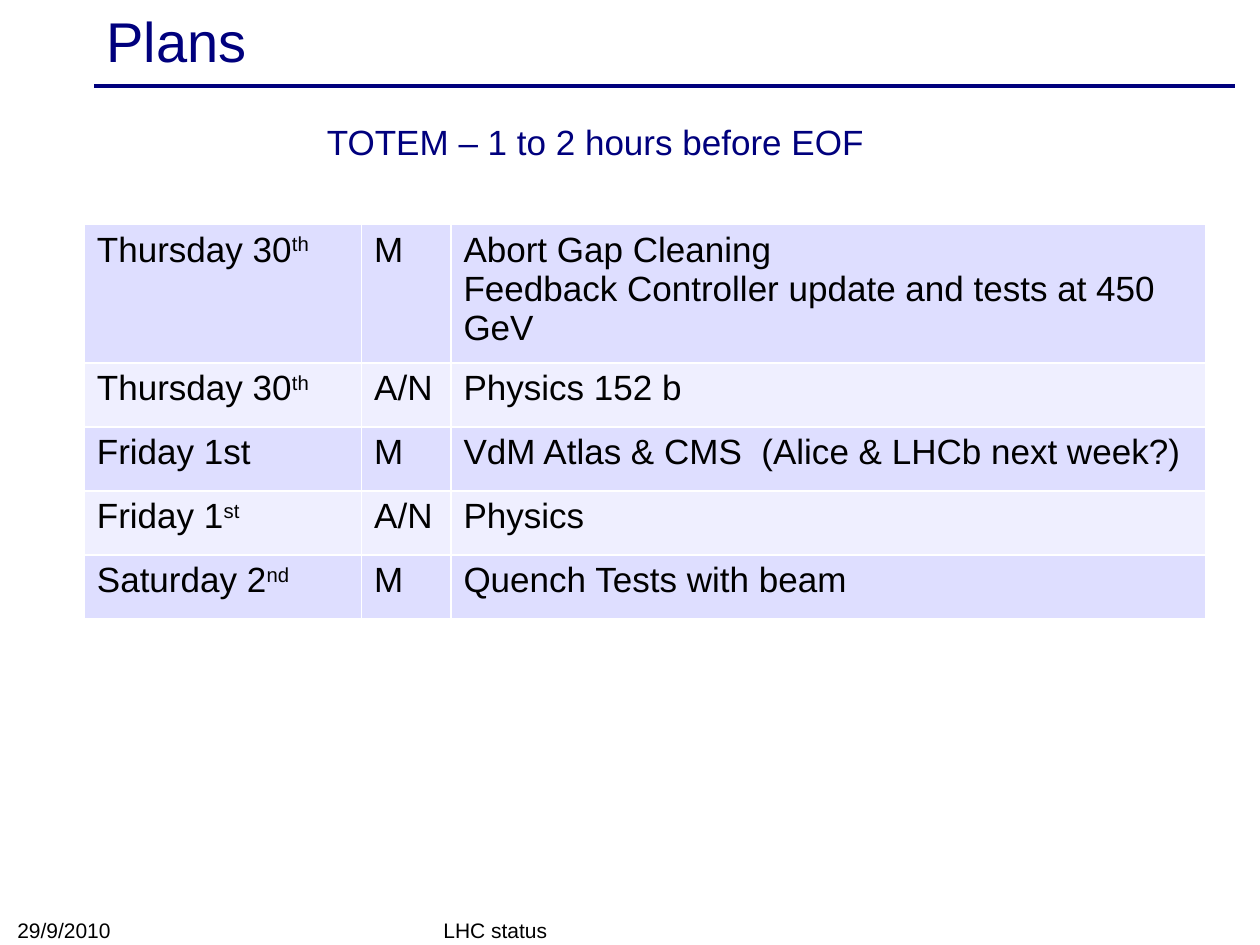
from dataclasses import dataclass

from lxml import etree
from pptx import Presentation
from pptx.dml.color import RGBColor
from pptx.enum.shapes import MSO_CONNECTOR
from pptx.enum.text import MSO_ANCHOR as Anchor, PP_ALIGN as Align
from pptx.oxml import parse_xml
from pptx.oxml.ns import nsdecls, qn
from pptx.util import Cm, Pt


@dataclass(frozen=True)
class Theme:
    font: str = "Arial"
    navy: str = "00007D"
    ink: str = "000000"
    border: str = "FFFFFF"
    bands: tuple = ("DEDEFF", "EFEFFF")
    title_size: int = 32
    body_size: int = 20
    footer_size: int = 12


theme = Theme()


def add_run(paragraph, text, size, color, superscript=False):
    run = paragraph.add_run()
    run.text = text
    for name, value in {"name": theme.font, "size": Pt(size)}.items():
        setattr(run.font, name, value)
    run.font.color.rgb = RGBColor.from_string(color)
    if superscript:
        run._r.get_or_add_rPr().set("baseline", "30000")


prs = Presentation()
prs.slide_width, prs.slide_height = Cm(25.4), Cm(19.05)
slide = prs.slides.add_slide(prs.slide_layouts[6])

# Rule under the title
title_rule = slide.shapes.add_connector(
    MSO_CONNECTOR.STRAIGHT, Cm(1.9), Cm(1.73), Cm(24.9), Cm(1.73))
title_rule.line.color.rgb = RGBColor.from_string(theme.navy)
title_rule.line.width = Pt(2)
etree.SubElement(title_rule._element.spPr, qn("a:effectLst"))

# Title, subtitle and footer
labels = [
    ("Plans", (1.9, 0.08, 22.86, 1.45), theme.title_size, theme.navy, Anchor.MIDDLE, Align.LEFT),
    ("TOTEM – 1 to 2 hours before EOF", (6.1, 2.31, 11.81, 1.12),
     theme.body_size, theme.navy, Anchor.TOP, Align.CENTER),
    ("LHC status", (8.69, 18.4, 8.05, 0.72), theme.footer_size, theme.ink, Anchor.BOTTOM, Align.LEFT),
    ("29/9/2010", (0.1, 18.4, 5.92, 0.72), theme.footer_size, theme.ink, Anchor.BOTTOM, Align.LEFT),
]
for text, place, size, color, anchor, alignment in labels:
    frame = slide.shapes.add_textbox(*map(Cm, place)).text_frame
    for name, value in {"word_wrap": True, "vertical_anchor": anchor}.items():
        setattr(frame, name, value)
    frame.paragraphs[0].alignment = alignment
    add_run(frame.paragraphs[0], text, size, color)

# Schedule: day, ordinal suffix raised above the line, shift, activities
schedule = [
    ("Thursday 30", "th", "M",
     ["Abort Gap Cleaning", "Feedback Controller update and tests at 450 GeV"]),
    ("Thursday 30", "th", "A/N", ["Physics 152 b"]),
    ("Friday 1st", "", "M", ["VdM Atlas & CMS  (Alice & LHCb next week?)"]),
    ("Friday 1", "st", "A/N", ["Physics"]),
    ("Saturday 2", "nd", "M", ["Quench Tests with beam"]),
]
column_widths = [5.59, 1.8, 15.21]
row_height = 1.29
plan = slide.shapes.add_table(
    len(schedule), len(column_widths), Cm(1.7), Cm(4.52),
    Cm(sum(column_widths)), Cm(row_height * len(schedule))).table
plan.first_row = plan.horz_banding = False
for column, width in zip(plan.columns, column_widths):
    column.width = Cm(width)

for index, (day, suffix, shift, activities) in enumerate(schedule):
    row = plan.rows[index]
    row.height = Cm(row_height)
    for cell, lines in zip(row.cells, ([day], [shift], activities)):
        properties = cell._tc.get_or_add_tcPr()
        for side in ("lnL", "lnR", "lnT", "lnB"):
            properties.append(parse_xml(
                f'<a:{side} {nsdecls("a")} w="{Pt(1)}"><a:solidFill>'
                f'<a:srgbClr val="{theme.border}"/></a:solidFill></a:{side}>'))
        cell.fill.solid()
        cell.fill.fore_color.rgb = RGBColor.from_string(theme.bands[index % 2])
        frame = cell.text_frame
        for number, line in enumerate(lines):
            paragraph = frame.add_paragraph() if number else frame.paragraphs[0]
            add_run(paragraph, line, theme.body_size, theme.ink)
    if suffix:
        add_run(row.cells[0].text_frame.paragraphs[0], suffix,
                theme.body_size, theme.ink, superscript=True)

prs.save("out.pptx")
